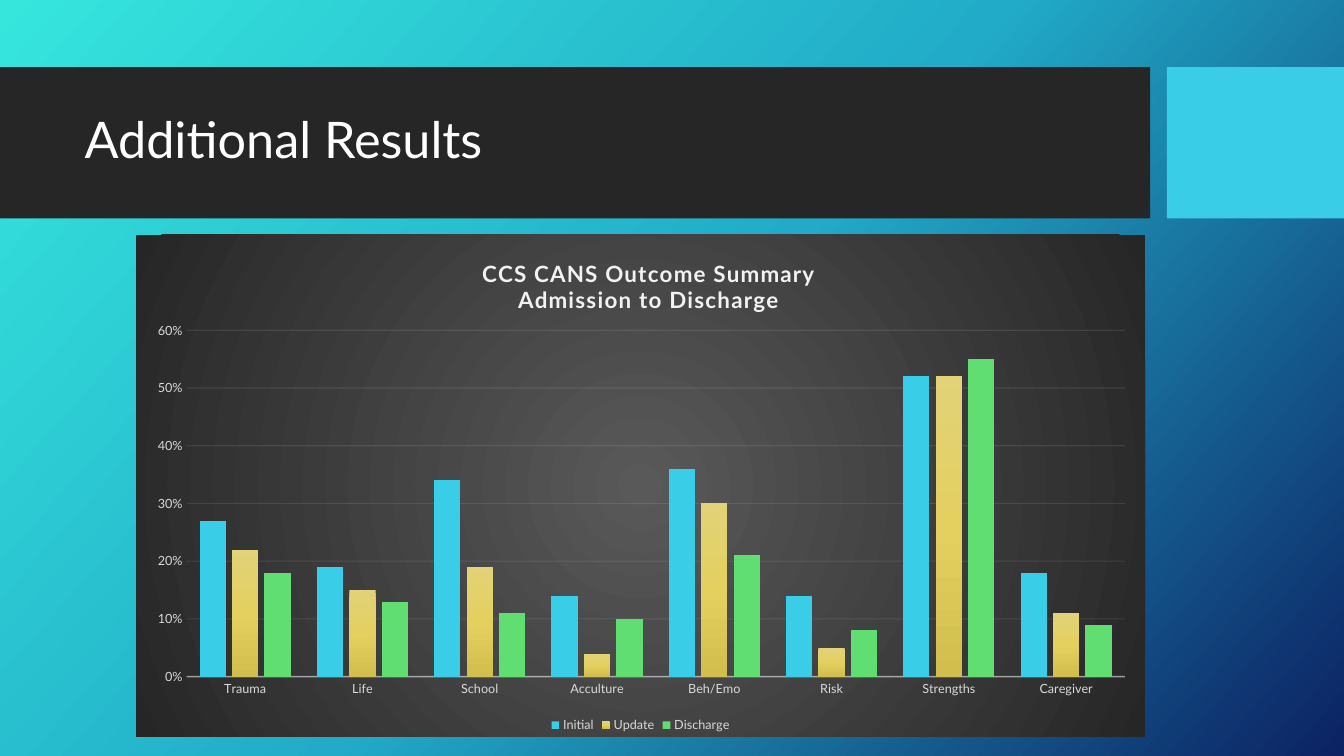
from pptx import Presentation
from pptx.chart.data import CategoryChartData
from pptx.dml.color import RGBColor
from pptx.enum.chart import XL_CHART_TYPE, XL_LEGEND_POSITION, XL_TICK_MARK
from pptx.enum.shapes import MSO_SHAPE
from pptx.enum.text import MSO_ANCHOR, PP_ALIGN
from pptx.oxml import parse_xml
from pptx.oxml.ns import nsdecls, qn
from pptx.util import Pt

COLORS = {
    "band": "262626", "cyan": "39CDE7", "green": "60DE72",
    "white": "FFFFFF", "pale": "F2F2F2", "label": "D9D9D9",
}
BACKDROP = [(0, "36E6DD"), (50, "21ABC8"), (100, "0C2263")]
YELLOW = [(0, "E2D278"), (50, "E3D05E"), (100, "D1BE4C")]
CHART_GLOW = [(0, "595959"), (100, "262626")]

DOMAINS = ["Trauma", "Life", "School", "Acculture",
           "Beh/Emo", "Risk", "Strengths", "Caregiver"]
OUTCOMES = {
    "Initial": [0.27, 0.19, 0.34, 0.14, 0.36, 0.14, 0.52, 0.18],
    "Update": [0.22, 0.15, 0.19, 0.04, 0.3, 0.05, 0.52, 0.11],
    "Discharge": [0.18, 0.13, 0.11, 0.1, 0.21, 0.08, 0.55, 0.09],
}


def rgb(name):
    return RGBColor.from_string(COLORS[name])


def gradient(stops, angle=None):
    """Linear gradient at an angle, or a centred radial one without it."""
    marks = "".join(f'<a:gs pos="{pos * 1000}"><a:srgbClr val="{color}"/></a:gs>'
                    for pos, color in stops)
    if angle is None:
        shade = ('<a:path path="circle"><a:fillToRect l="50000" t="50000" '
                 'r="50000" b="50000"/></a:path>')
    else:
        shade = f'<a:lin ang="{angle * 60000}" scaled="0"/>'
    return parse_xml(f'<a:gradFill {nsdecls("a")} rotWithShape="1">'
                     f'<a:gsLst>{marks}</a:gsLst>{shade}</a:gradFill>')


def swap_solid(parent, fill):
    solid = parent.find(".//" + qn("a:solidFill"))
    solid.getparent().replace(solid, fill)


def manual_layout(x, y, w=None, h=None, inner=False):
    target = '<c:layoutTarget val="inner"/>' if inner else ""
    modes = '<c:xMode val="edge"/><c:yMode val="edge"/>'
    sizes = "".join(f'<c:{key} val="{value}"/>'
                    for key, value in zip("xywh", (x, y, w, h)) if value is not None)
    return parse_xml(f'<c:layout {nsdecls("c")}><c:manualLayout>'
                     f'{target}{modes}{sizes}</c:manualLayout></c:layout>')


def drop_layout(parent):
    for layout in parent.findall(qn("c:layout")):
        parent.remove(layout)


class Deck:
    font = "Lato"

    def __init__(self, width, height):
        self.prs = Presentation()
        self.prs.slide_width, self.prs.slide_height = Pt(width), Pt(height)
        self.slide = self.prs.slides.add_slide(self.prs.slide_layouts[6])

    def style(self, font, size, color, bold=False):
        font.name, font.size, font.bold = self.font, Pt(size), bold
        font.color.rgb = rgb(color)

    def put_text(self, frame, text, size=12, color="white", bold=False,
                 align=PP_ALIGN.LEFT, line_spacing=None, tracking=0):
        for i, line in enumerate(text.split("\n")):
            paragraph = frame.add_paragraph() if i else frame.paragraphs[0]
            paragraph.alignment = align
            if line_spacing:
                paragraph.line_spacing = line_spacing
            run = paragraph.add_run()
            run.text = line
            self.style(run.font, size, color, bold)
            if tracking:
                run._r.get_or_add_rPr().set("spc", str(tracking * 100))

    def background(self, stops, angle):
        self.slide.background.fill.solid()
        self.slide.background.fill.fore_color.rgb = rgb("cyan")
        swap_solid(self.slide.element.find(".//" + qn("p:bgPr")),
                   gradient(stops, angle))

    def block(self, x, y, w, h, color):
        shape = self.slide.shapes.add_shape(
            MSO_SHAPE.RECTANGLE, Pt(x), Pt(y), Pt(w), Pt(h))
        shape.shadow.inherit = False
        shape.fill.solid()
        shape.fill.fore_color.rgb = rgb(color)
        shape.line.fill.background()

    def label(self, x, y, w, h, text, **fmt):
        frame = self.slide.shapes.add_textbox(Pt(x), Pt(y), Pt(w), Pt(h)).text_frame
        frame.word_wrap = True
        frame.vertical_anchor = MSO_ANCHOR.MIDDLE
        self.put_text(frame, text, **fmt)

    def faint_line(self, line, width, opacity):
        line.width = Pt(width)
        line.color.rgb = rgb("pale")
        color = line.fill._xPr.find(".//" + qn("a:srgbClr"))
        color.append(parse_xml(f'<a:alpha {nsdecls("a")} val="{opacity * 1000}"/>'))

    def column_chart(self, x, y, w, h, title, categories, series, fills):
        data = CategoryChartData(number_format="0%")
        data.categories = categories
        for name, values in series.items():
            data.add_series(name, values)
        chart = self.slide.shapes.add_chart(
            XL_CHART_TYPE.COLUMN_CLUSTERED, Pt(x), Pt(y), Pt(w), Pt(h), data).chart
        self.style(chart.font, 10, "white")

        # Chart area and plot area
        area = parse_xml(f'<c:spPr {nsdecls("c", "a")}><a:ln><a:noFill/></a:ln></c:spPr>')
        area.insert(0, gradient(CHART_GLOW))
        chart.element.find(qn("c:chart")).addnext(area)
        plot_area = chart.element.find(".//" + qn("c:plotArea"))
        drop_layout(plot_area)
        plot_area.insert(0, manual_layout(0.05, 0.19, 0.93, 0.69, inner=True))

        # Chart title
        chart.has_title = True
        self.put_text(chart.chart_title.text_frame, title, size=16, color="pale",
                      bold=True, align=PP_ALIGN.CENTER, tracking=1)
        heading = chart.element.find(".//" + qn("c:title"))
        drop_layout(heading)
        heading.find(qn("c:tx")).addnext(manual_layout(0.34, 0.04))

        # Columns
        plot = chart.plots[0]
        plot.gap_width, plot.overlap, plot.vary_by_categories = 100, -24, False
        for columns, fill in zip(plot.series, fills):
            columns.invert_if_negative = False
            columns.format.fill.solid()
            columns.format.fill.fore_color.rgb = rgb(fill or "cyan")
            if fill is None:
                swap_solid(columns._element, gradient(YELLOW, 90))

        # Axes
        for axis in (chart.category_axis, chart.value_axis):
            axis.major_tick_mark = axis.minor_tick_mark = XL_TICK_MARK.NONE
            self.style(axis.tick_labels.font, 9, "label")
        self.faint_line(chart.category_axis.format.line, 1, 54)
        percent = chart.value_axis
        percent.minimum_scale, percent.maximum_scale, percent.major_unit = 0, 0.6, 0.1
        percent.tick_labels.number_format = "0%"
        percent.tick_labels.number_format_is_linked = False
        percent.format.line.fill.background()
        self.faint_line(percent.major_gridlines.format.line, 0.75, 10)

        # Legend
        chart.has_legend = True
        chart.legend.position = XL_LEGEND_POSITION.BOTTOM
        chart.legend.include_in_layout = False
        self.style(chart.legend.font, 9, "label")


def main():
    deck = Deck(960, 540)
    deck.background(BACKDROP, 42)

    # Title band
    deck.block(0, 48, 821.5, 108, "band")
    deck.block(833.5, 48, 126.5, 108, "cyan")
    deck.label(53.3, 59, 756.7, 85, "Additional Results", size=36, line_spacing=0.9)

    # Outcome chart
    deck.column_chart(97.2, 167.8, 720.7, 358.6,
                      "CCS CANS Outcome Summary\nAdmission to Discharge",
                      DOMAINS, OUTCOMES, ["cyan", None, "green"])
    deck.prs.save("out.pptx")


if __name__ == "__main__":
    main()
